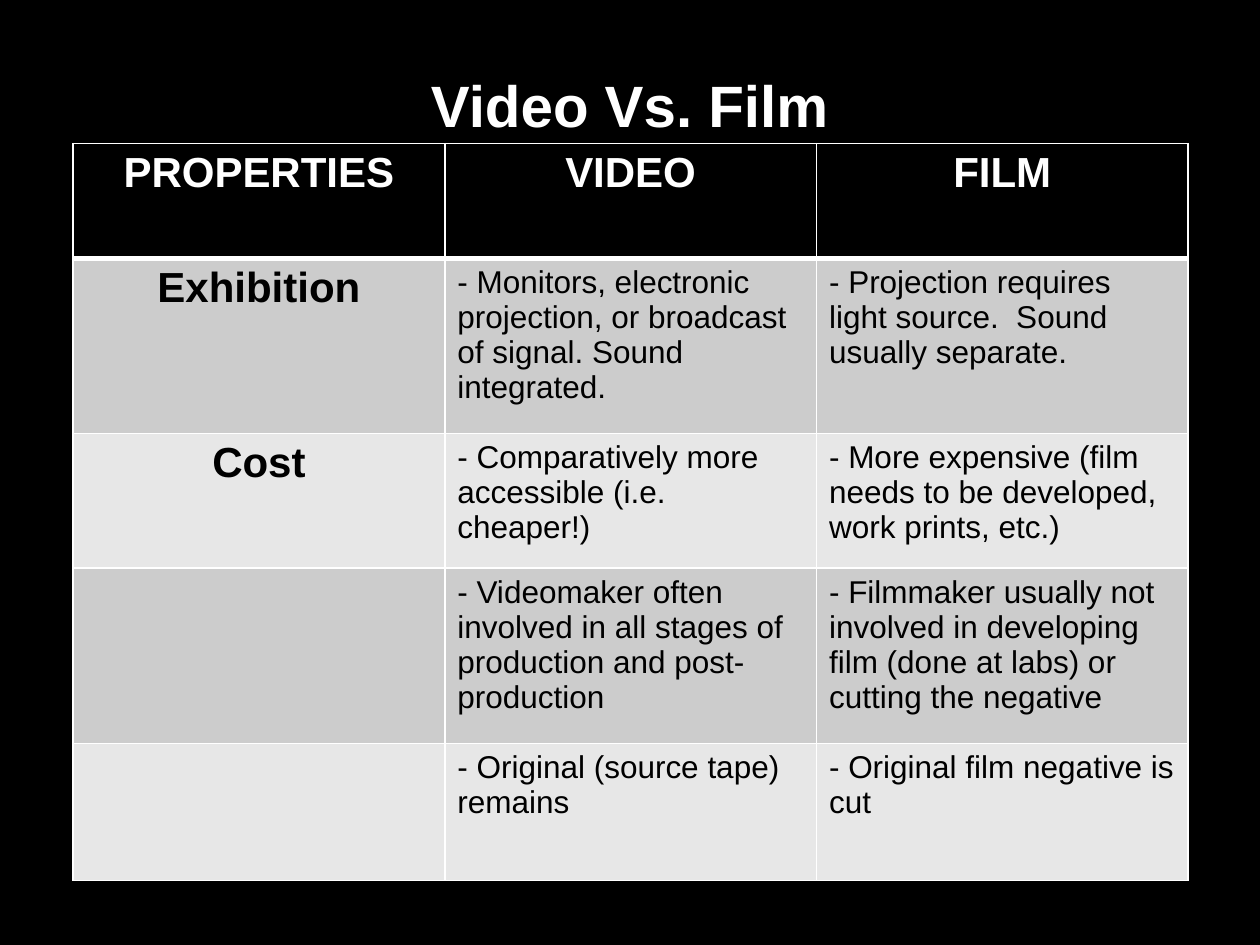
from lxml.etree import SubElement as Sub
from pptx import Presentation as Deck
from pptx.dml.color import RGBColor as RGB
from pptx.enum.text import MSO_ANCHOR as Anchor, PP_ALIGN as Align
from pptx.oxml.ns import qn
from pptx.util import Inches, Pt

BLACK = RGB(0, 0, 0)
WHITE = RGB(255, 255, 255)
DARK = RGB(0xCC, 0xCC, 0xCC)
LIGHT = RGB(0xE7, 0xE7, 0xE7)

ROWS = [
    ("PROPERTIES", "VIDEO", "FILM"),
    ("Exhibition",
     "- Monitors, electronic projection, or broadcast of signal. Sound integrated.",
     "- Projection requires light source.  Sound usually separate."),
    ("Cost",
     "- Comparatively more accessible (i.e. cheaper!)",
     "- More expensive (film needs to be developed, work prints, etc.)"),
    ("",
     "- Videomaker often involved in all stages of production and post-production",
     "- Filmmaker usually not involved in developing film (done at labs) or cutting the negative"),
    ("", "- Original (source tape) remains", "- Original film negative is cut"),
]
TALL = [0.91, 1.39, 1.07, 1.39, 1.09]


class Page:
    font = "Arial"
    head = {"size": Pt(24), "bold": True}
    body = {"size": Pt(18), "bold": False}

    def __init__(self, deck):
        self.wide, self.high = deck.slide_width, deck.slide_height
        self.slide = deck.slides.add_slide(deck.slide_layouts[6])
        fill = self.slide.background.fill
        fill.solid()
        fill.fore_color.rgb = BLACK

    def place(self, x, y, w, h):
        return (round(x * self.wide), round(y * self.high),
                round(w * self.wide), round(h * self.high))

    def label(self, frame, text, form, ink, align):
        para = frame.paragraphs[0]
        para.alignment = align
        if text:
            run = para.add_run()
            run.text = text
            for key, val in {"name": self.font, **form}.items():
                setattr(run.font, key, val)
            run.font.color.rgb = ink
        return para

    def title(self, text, *area):
        frame = self.slide.shapes.add_textbox(*self.place(*area)).text_frame
        frame.word_wrap = True
        frame.vertical_anchor = Anchor.MIDDLE
        form = {"size": Pt(33.3), "bold": True}
        para = self.label(frame, text, form, WHITE, Align.CENTER)
        para.space_before = Pt(6.7)

    def edge(self, cell, side, width):
        line = Sub(cell._tc.get_or_add_tcPr(), qn("a:ln" + side), w=str(Pt(width)))
        Sub(Sub(line, qn("a:solidFill")), qn("a:srgbClr"), val=str(WHITE))

    def cell(self, cell, text, row, col):
        for side in "LRTB":
            thick = (row, side) in ((0, "B"), (1, "T"))
            self.edge(cell, side, 3 if thick else 1)
        cell.fill.solid()
        cell.fill.fore_color.rgb = (DARK if row % 2 else LIGHT) if row else BLACK
        main = row == 0 or col == 0
        self.label(cell.text_frame, text, self.head if main else self.body,
                   BLACK if row else WHITE, Align.CENTER if main else Align.LEFT)

    def table(self, rows, tall, *area):
        grid = self.slide.shapes.add_table(
            len(rows), len(rows[0]), *self.place(*area)).table
        for band, size in zip(grid.rows, tall):
            band.height = Inches(size)
        for r, texts in enumerate(rows):
            for c, text in enumerate(texts):
                self.cell(grid.cell(r, c), text, r, c)


def main():
    deck = Deck()
    deck.slide_width, deck.slide_height = Inches(10), Inches(7.5)
    page = Page(deck)
    page.title("Video Vs. Film", 0, 0.07, 1, 0.08)
    page.table(ROWS, TALL, 0.058, 1.14 / 7.5, 0.885, 0.78)
    deck.save("out.pptx")


if __name__ == "__main__":
    main()
